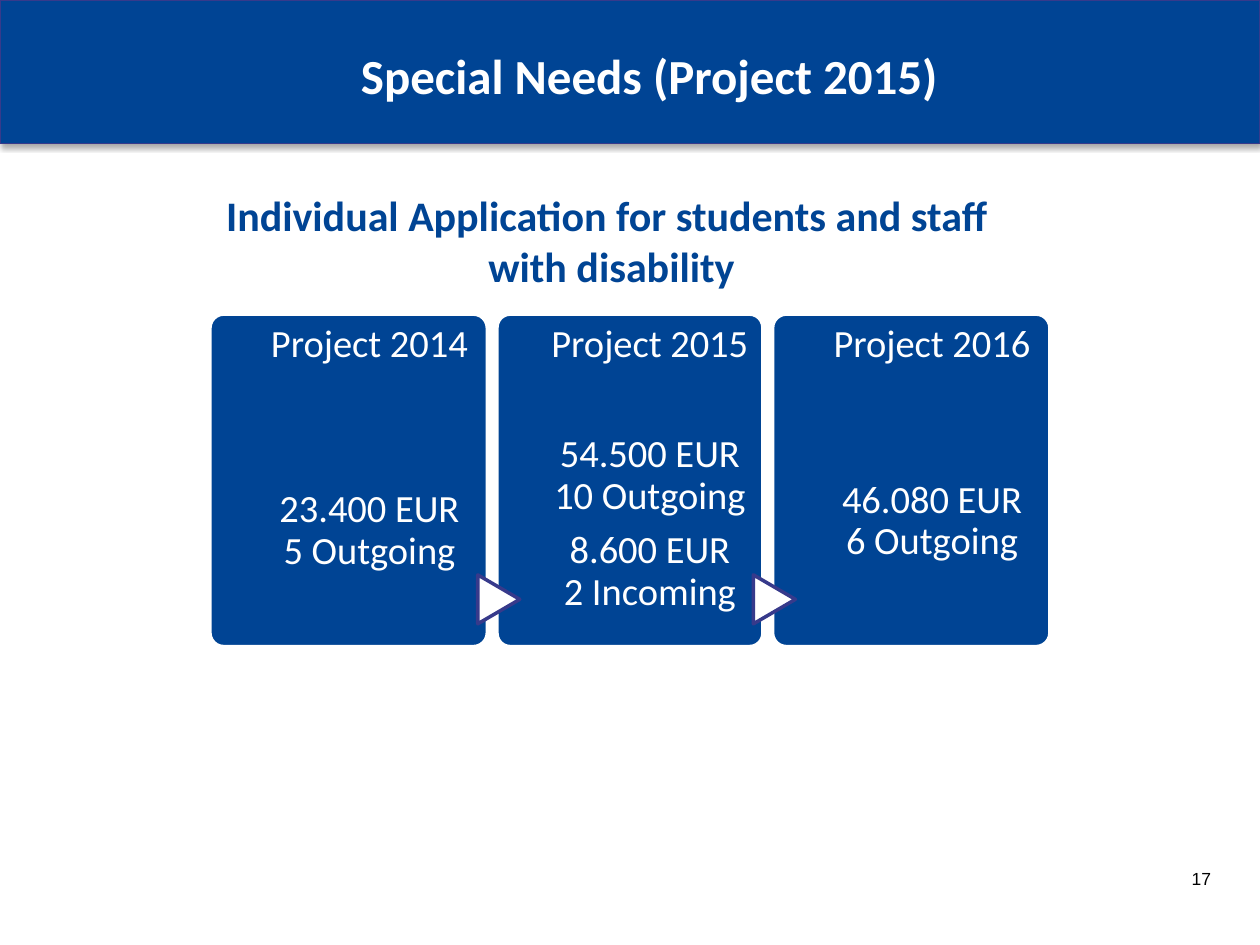
from lxml import etree
from pptx import Presentation
from pptx.dml.color import RGBColor as RGB
from pptx.enum.shapes import MSO_SHAPE as Kind
from pptx.enum.text import MSO_ANCHOR as Anchor, PP_ALIGN as Align
from pptx.oxml.ns import qn
from pptx.util import Pt

COLORS = {"blue": "004494", "edge": "373A8B", "white": "FFFFFF", "black": "000000"}

# Heading, figures, gap above the figures
CARDS = [
    ("Project 2014", ["23.400 EUR\n5 Outgoing"], 62.8),
    ("Project 2015", ["54.500 EUR\n10 Outgoing", "8.600 EUR\n2 Incoming"], 31.4),
    ("Project 2016", ["46.080 EUR\n6 Outgoing"], 57.6),
]


def color(name):
    return RGB.from_string(COLORS[name])


def add_shape(slide, kind, box, fill, line, width):
    shape = slide.shapes.add_shape(kind, *map(Pt, box))
    shape.shadow.inherit = False
    shape.fill.solid()
    shape.fill.fore_color.rgb = color(fill)
    shape.line.color.rgb = color(line)
    shape.line.width = Pt(width)
    return shape


def add_text(slide, box, texts, size, ink, font="Calibri", bold=False,
             align=Align.CENTER, insets=(7.2, 3.6, 7.2, 3.6)):
    frame = slide.shapes.add_textbox(*map(Pt, box)).text_frame
    frame.word_wrap = True
    (frame.margin_left, frame.margin_top,
     frame.margin_right, frame.margin_bottom) = map(Pt, insets)
    for i, text in enumerate(texts):
        para = frame.paragraphs[0] if i == 0 else frame.add_paragraph()
        para.text = text
        para.alignment = align
        para.font.size = Pt(size)
        para.font.name = font
        para.font.bold = bold
        para.font.color.rgb = color(ink)
    return frame


def add_shadow(shape):
    effects = shape._element.spPr.find(qn("a:effectLst"))
    outer = etree.SubElement(effects, qn("a:outerShdw"), blurRad=str(Pt(3.1)),
                             dist=str(Pt(1.8)), dir="5400000", rotWithShape="0")
    tint = etree.SubElement(outer, qn("a:srgbClr"), val=COLORS["black"])
    etree.SubElement(tint, qn("a:alpha"), val="35000")


def add_header(slide, box):
    left, top, width, height = box
    add_shadow(add_shape(slide, Kind.RECTANGLE, box, "blue", "edge", 0.75))
    title = add_text(slide, (left + 21, top + 11.5, width - 20, height - 19.5),
                     ["Special Needs (Project 2015)"], 28, "white", bold=True)
    title.vertical_anchor = Anchor.MIDDLE


def add_card(slide, box, head, figures, gap, arrow):
    left, top, width, height = box
    card = add_shape(slide, Kind.ROUNDED_RECTANGLE, box, "blue", "white", 2)
    card.adjustments[0] = 0.05
    # Arrow from the card before
    if arrow:
        wide, high = 28, 24
        mark = add_shape(slide, Kind.FLOWCHART_EXTRACT,
                         (left + 1 - wide / 2, top + 163 - high / 2, wide, high),
                         "white", "edge", 2)
        mark.rotation = 90
    frame = add_text(slide, (left + 0.2 * width, top, 0.75 * width, height),
                     [head, *figures], 22, "white", insets=(0, 6, 0, 0))
    for para in frame.paragraphs:
        para.line_spacing = 0.9
        para.space_after = Pt(7.5)
    frame.paragraphs[1].space_before = Pt(gap)


def add_cards(slide, box):
    left, top, width, height = box
    space = 5.5
    narrow = 152
    wide = (width - narrow - 2 * space) / 2
    for i, (card, size) in enumerate(zip(CARDS, (wide, narrow, wide))):
        add_card(slide, (left, top, size, height), *card, arrow=i > 0)
        left += size + space


def main():
    deck = Presentation()
    deck.slide_width, deck.slide_height = Pt(720), Pt(540)
    slide = deck.slides.add_slide(deck.slide_layouts[6])
    add_header(slide, (0, 0, 720, 82))
    # Slide number
    add_text(slide, (607, 496, 85, 44), ["17"], 10, "black", font="Arial",
             align=Align.RIGHT, insets=(0, 0, 0, 0))
    add_cards(slide, (120, 179.5, 480, 190))
    # Subtitle
    add_text(slide, (120, 105, 459, 65.5),
             ["Individual Application for students and staff \nwith disability"],
             24, "blue", bold=True)
    deck.save("out.pptx")


if __name__ == "__main__":
    main()
